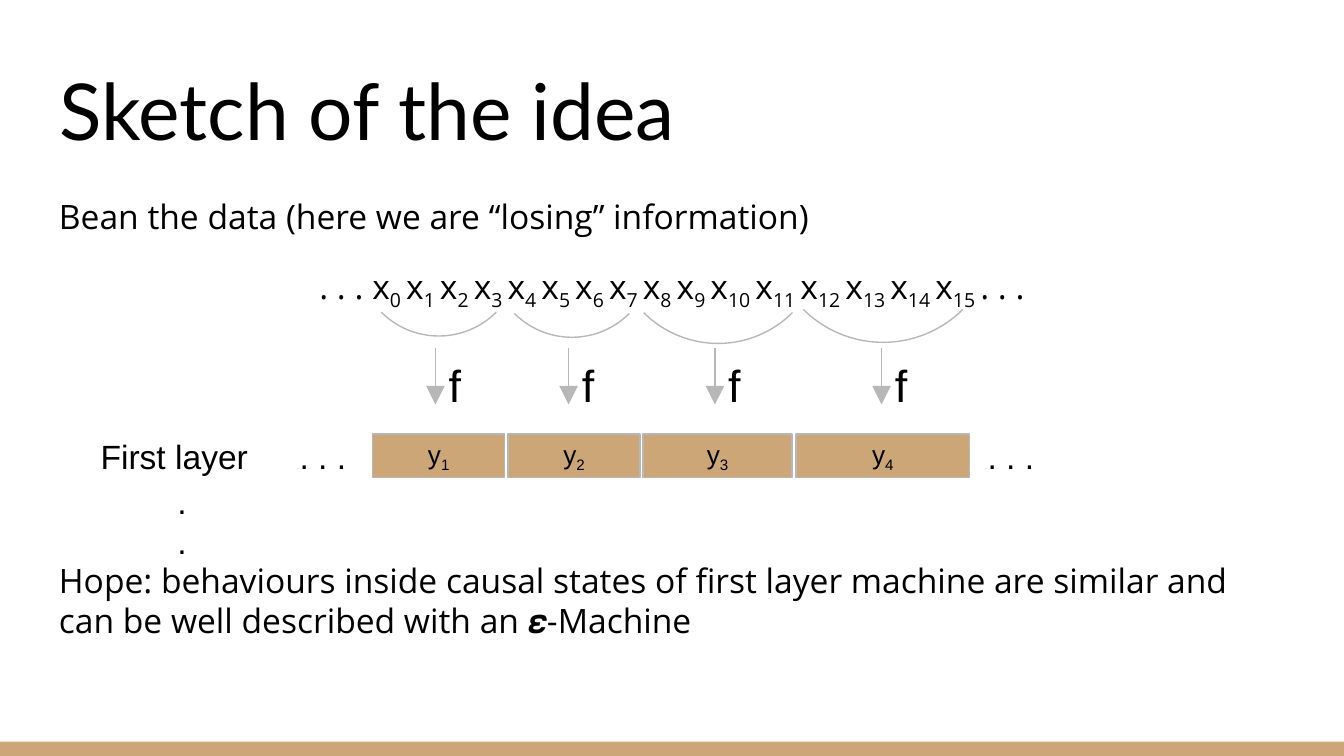
import pptx
import pptx.util
import pptx.dml.color
import pptx.enum.shapes
import pptx.enum.text
import pptx.oxml.ns
import lxml.etree

Pt = pptx.util.Pt
SHAPE = pptx.enum.shapes.MSO_SHAPE
ALIGN = pptx.enum.text.PP_ALIGN
ANCHOR = pptx.enum.text.MSO_ANCHOR
TAN, GREY, BLACK = "CCA677", "B7B7B7", "000000"


def paint(color_format, hex_color):
    color_format.rgb = pptx.dml.color.RGBColor.from_string(hex_color)


def write(shape, paragraphs, size, font="Arial", anchor=ANCHOR.TOP, align=ALIGN.LEFT):
    """Fill a shape with paragraphs; each is a list of (text, is_subscript) runs."""
    frame = shape.text_frame
    frame.word_wrap = True
    frame.vertical_anchor = anchor
    frame.margin_left = frame.margin_right = Pt(7.2)
    frame.margin_top = frame.margin_bottom = Pt(7.2)
    for i, parts in enumerate(paragraphs):
        paragraph = frame.paragraphs[0] if i == 0 else frame.add_paragraph()
        paragraph.alignment = align
        for text, is_subscript in parts:
            run = paragraph.add_run()
            run.text = text
            run.font.size = Pt(size)
            run.font.name = font
            paint(run.font.color, BLACK)
            if is_subscript:
                run.font._element.set("baseline", "-25000")
    return frame


deck = pptx.Presentation()
deck.slide_width, deck.slide_height = Pt(720), Pt(405)
slide = deck.slides.add_slide(deck.slide_layouts[5])
shapes = slide.shapes

# Footer bar
footer = shapes.add_shape(SHAPE.RECTANGLE, 0, Pt(397.4), Pt(720), Pt(7.6))
footer.shadow.inherit = False
footer.fill.solid()
paint(footer.fill.fore_color, TAN)
footer.line.fill.background()

# Title
title = shapes.title
title.left, title.top, title.width, title.height = Pt(24.5), Pt(25.2), Pt(671), Pt(65.5)
write(title, [[("Sketch of the idea", False)]], 42, "Lato", ANCHOR.BOTTOM)

# Body: opening line, data sequence, closing hope
sequence = [(". . . ", False)]
for i in range(16):
    sequence += [("x", False), (f"{i} ", True)]
sequence.append((". . .", False))
body = shapes.add_textbox(Pt(24.5), Pt(97.5), Pt(671), Pt(264))
body_frame = write(body, [
    [("Bean the data (here we are “losing” information)", False)],
    sequence,
    [("Hope: behaviours inside causal states of first layer machine are similar "
      "and can be well described with an 𝜺-Machine", False)],
], 18, "Open Sans")
opening, data, hope = body_frame.paragraphs
opening.space_after = data.space_after = Pt(16)
data.alignment = ALIGN.CENTER
hope.space_before = Pt(117)

# Groups: box left, box width, arc left, arc top, arc size, arrow x
groups = [
    (199.7, 70.6, 191.5, 92.9, 87.1, 233.3),
    (272.2, 70.6, 262.8, 93.6, 87.1, 304.6),
    (344.5, 79.9, 328.3, 71.3, 112.7, 383),
    (426.5, 92.9, 412.6, 62.4, 121, 472.3),
]
for number, (left, width, arc_left, arc_top, arc_size, arrow_x) in enumerate(groups, 1):
    # First-layer box
    box = shapes.add_shape(SHAPE.RECTANGLE, Pt(left), Pt(232.6), Pt(width), Pt(23.2))
    box.fill.solid()
    paint(box.fill.fore_color, TAN)
    write(box, [[("y", False), (str(number), True)]], 14,
          anchor=ANCHOR.MIDDLE, align=ALIGN.CENTER)

    # Bracket under the grouped data
    arc = shapes.add_shape(SHAPE.ARC, Pt(arc_left), Pt(arc_top), Pt(arc_size), Pt(arc_size))
    arc.rotation = 135
    arc.fill.background()
    for outlined in (box, arc):
        outlined.shadow.inherit = False
        paint(outlined.line.color, GREY)
        outlined.line.width = Pt(0.75)

    # Arrow and its function label
    arrow = shapes.add_connector(pptx.enum.shapes.MSO_CONNECTOR.STRAIGHT,
                                 Pt(arrow_x), Pt(186.5), Pt(arrow_x), Pt(216.7))
    paint(arrow.line.color, GREY)
    arrow.line.width = Pt(0.75)
    qn = pptx.oxml.ns.qn
    head = lxml.etree.SubElement(arrow.line._get_or_add_ln(), qn("a:tailEnd"))
    for key, value in (("type", "triangle"), ("w", "lg"), ("len", "lg")):
        head.set(key, value)
    lxml.etree.SubElement(arrow._element.spPr, qn("a:effectLst"))
    function_label = shapes.add_textbox(Pt(arrow_x), Pt(184.3), Pt(31), Pt(23))
    write(function_label, [[("f", False)]], 24)

# Layer label and the dots on both sides of the boxes
for text, left, width in (("First layer", 46.8, 101.5), (". . .", 153.4, 45.4),
                          (". . .", 522, 45.4)):
    layer_label = shapes.add_textbox(Pt(left), Pt(211.7), Pt(width), Pt(65.5))
    write(layer_label, [[(text, False)]], 18, anchor=ANCHOR.MIDDLE)

# Dots leading to further layers
further_layers = shapes.add_textbox(Pt(57.6), Pt(256.3), Pt(79.9), Pt(45.4))
write(further_layers, [[(".", False)], [(".", False)]], 18,
      anchor=ANCHOR.MIDDLE, align=ALIGN.CENTER)

deck.save("out.pptx")
